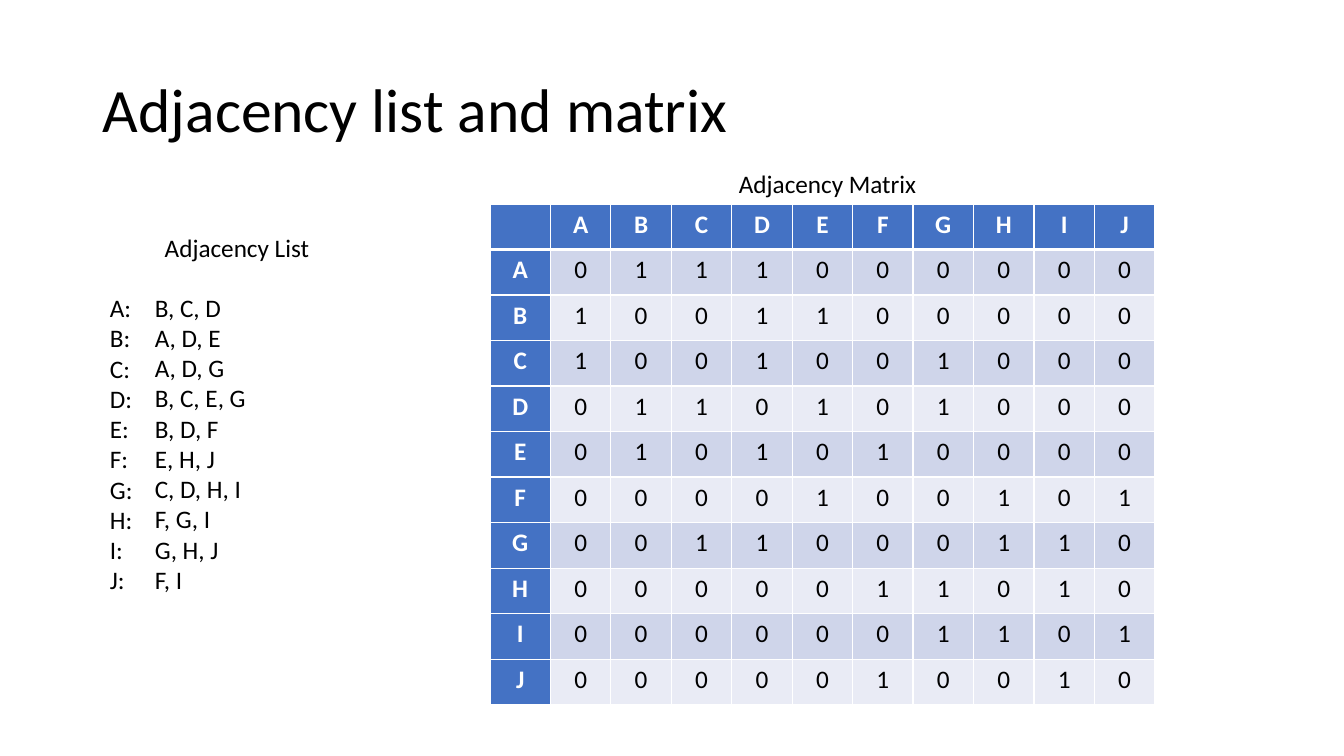
from lxml.etree import SubElement
from pptx import Presentation
from pptx.dml.color import RGBColor
from pptx.enum.text import MSO_ANCHOR, PP_ALIGN
from pptx.oxml.ns import qn
from pptx.util import Pt

TITLE = "Adjacency list and matrix"
LIST_HEAD = "Adjacency List"
GRID_HEAD = "Adjacency Matrix"
LINKS = {
    "A": "B, C, D",
    "B": "A, D, E",
    "C": "A, D, G",
    "D": "B, C, E, G",
    "E": "B, D, F",
    "F": "E, H, J",
    "G": "C, D, H, I",
    "H": "F, G, I",
    "I": "G, H, J",
    "J": "F, I",
}
COLORS = {
    "text": "000000",
    "white": "FFFFFF",
    "head": "4472C4",
    "dark": "CFD5EA",
    "light": "E9EBF5",
}
BOXES = {
    "title": (93, 40, 1159, 146),
    "names": (100, 227, 274, 377),
    "links": (145, 287, 172, 346),
    "label": (729, 163, 200, 40),
    "grid": (490, 204, 665, 501),
}
FONT = "Calibri"


def px(n):
    return round(n * 914400 / 100.8)


def paint(para, size=18, color="text", bold=False):
    for run in para.runs:
        run.font.name = FONT
        run.font.size = Pt(size)
        run.font.bold = bold
        run.font.color.rgb = RGBColor.from_string(COLORS[color])


def add_text(slide, key, lines, size=18, wrap=True):
    frame = slide.shapes.add_textbox(*map(px, BOXES[key])).text_frame
    frame.word_wrap = wrap
    frame.text = "\n".join(lines)
    for para in frame.paragraphs:
        paint(para, size)
    return frame


def add_edge(cell, side, width):
    props = cell._tc.get_or_add_tcPr()
    line = SubElement(props, qn("a:" + side), w=str(Pt(width)))
    fill = SubElement(line, qn("a:solidFill"))
    SubElement(fill, qn("a:srgbClr"), val=COLORS["white"])


def fill_cell(cell, text, row, col):
    head = row == 0 or col == 0
    widths = {
        "lnL": 1,
        "lnR": 1,
        "lnT": 3 if row == 1 else 1,
        "lnB": 3 if row == 0 else 1,
    }
    for side, width in widths.items():
        add_edge(cell, side, width)
    tone = "head" if head else "dark" if row % 2 else "light"
    cell.fill.solid()
    cell.fill.fore_color.rgb = RGBColor.from_string(COLORS[tone])
    cell.text = text
    para = cell.text_frame.paragraphs[0]
    para.alignment = PP_ALIGN.CENTER
    paint(para, color="white" if head else "text", bold=head)


def add_grid(slide):
    rows = [["", *LINKS]]
    for name, links in LINKS.items():
        near = links.split(", ")
        rows.append([name] + [str(int(other in near)) for other in LINKS])
    count = len(rows)
    left, top, width, height = map(px, BOXES["grid"])
    table = slide.shapes.add_table(count, count, left, top, width, height).table
    table.first_col = True
    for i, row in enumerate(rows):
        table.rows[i].height = height // count
        table.columns[i].width = width // count
        for j, text in enumerate(row):
            fill_cell(table.cell(i, j), text, i, j)


def main():
    deck = Presentation()
    deck.slide_width, deck.slide_height = px(1344), px(756)
    slide = deck.slides.add_slide(deck.slide_layouts[6])

    title = add_text(slide, "title", [TITLE], 44)
    title.vertical_anchor = MSO_ANCHOR.MIDDLE
    title.paragraphs[0].line_spacing = 0.9

    names = add_text(slide, "names", [LIST_HEAD] + [f"{name}:" for name in LINKS])
    names.paragraphs[0].alignment = PP_ALIGN.CENTER
    names.paragraphs[1].space_before = Pt(21.6)

    add_text(slide, "links", LINKS.values())
    add_text(slide, "label", [GRID_HEAD], wrap=False)
    add_grid(slide)
    deck.save("out.pptx")


if __name__ == "__main__":
    main()
